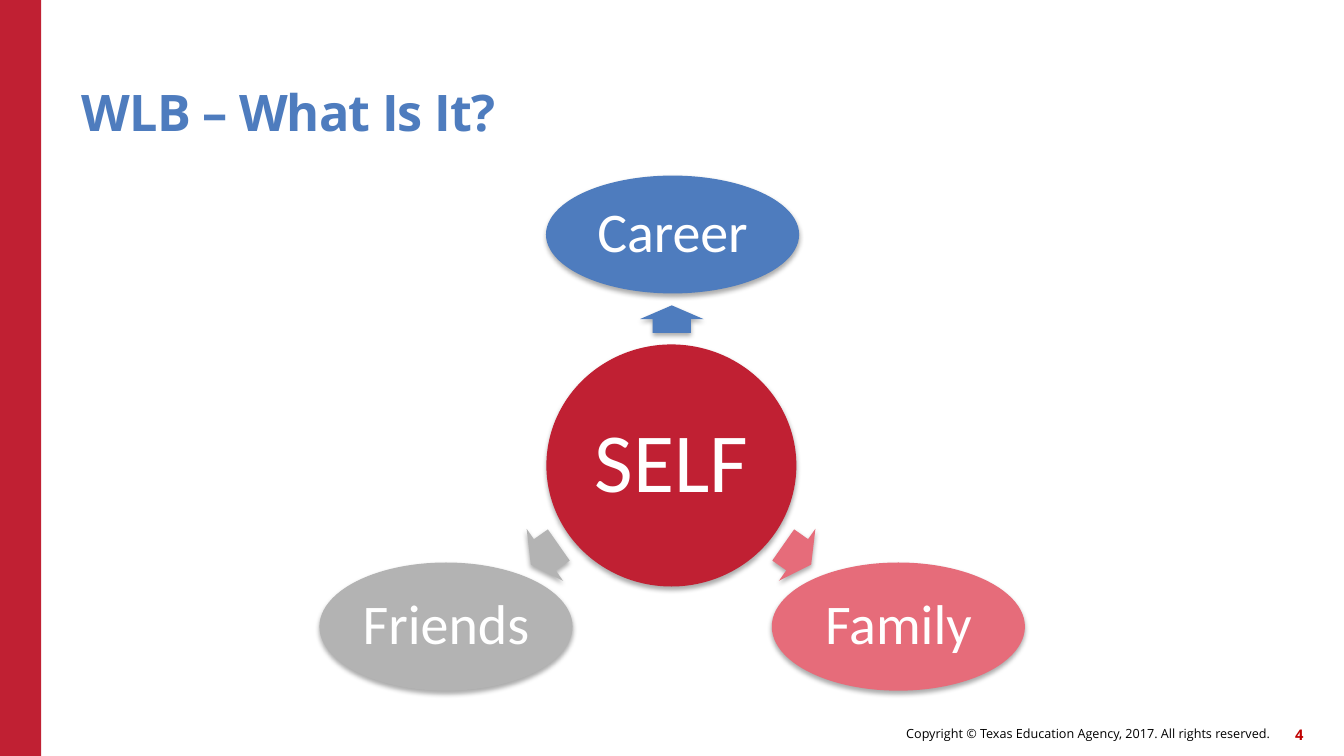
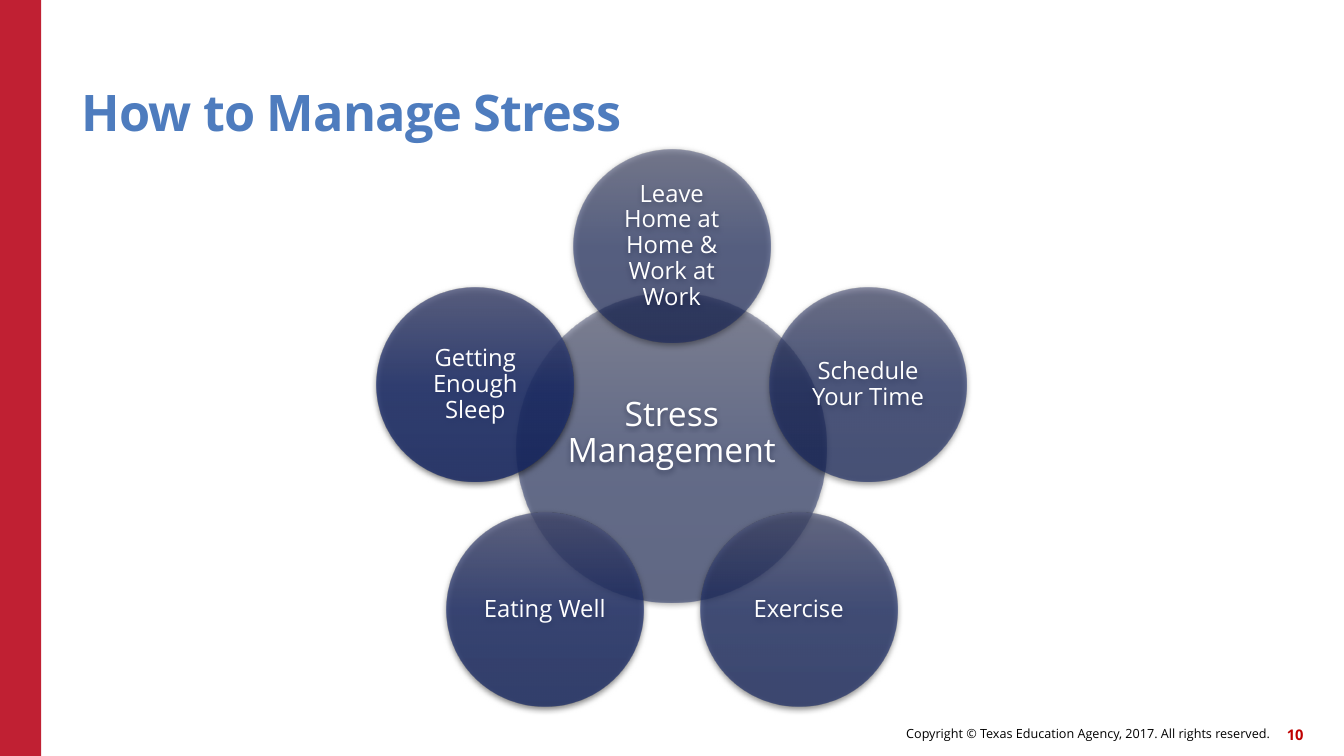
from lxml import etree
from pptx import Presentation
from pptx.dml.color import RGBColor
from pptx.enum.shapes import MSO_SHAPE
from pptx.enum.text import MSO_ANCHOR, PP_ALIGN
from pptx.oxml.ns import qn
from pptx.util import Cm, Pt

OVAL, ARROW, RECT = MSO_SHAPE.OVAL, MSO_SHAPE.RIGHT_ARROW, MSO_SHAPE.RECTANGLE
MIDDLE, BOTTOM = MSO_ANCHOR.MIDDLE, MSO_ANCHOR.BOTTOM
LEFT, CENTER, RIGHT = PP_ALIGN.LEFT, PP_ALIGN.CENTER, PP_ALIGN.RIGHT

RED = RGBColor(0xC0, 0x20, 0x33)
BLUE = RGBColor(0x4E, 0x7C, 0xBE)
PINK = RGBColor(0xE6, 0x6C, 0x7A)
GREY = RGBColor(0xB3, 0xB3, 0xB3)
WHITE = RGBColor(0xFF, 0xFF, 0xFF)
BLACK = RGBColor(0, 0, 0)
CRIMSON = RGBColor(0xC0, 0, 0)
# Top, middle and bottom of the bubble gradient, palest and deepest
PALE = [RGBColor(0x4E, 0x53, 0x74), RGBColor(0x1A, 0x2A, 0x63),
        RGBColor(0x14, 0x23, 0x5B)]
DEEP = [RGBColor(0x4F, 0x56, 0x7D), RGBColor(0x1E, 0x2F, 0x6D),
        RGBColor(0x17, 0x28, 0x64)]

SANS, BODY = "Open Sans", "Calibri"
WIDTH, HEIGHT = 33.87, 19.05
CREDIT = "Copyright © Texas Education Agency, 2017. All rights reserved."


def add(parent, tag, **attrs):
    """Append a child element to parent, with its attributes as text."""
    child = etree.SubElement(parent, qn(tag))
    for key, value in attrs.items():
        child.set(key, str(value))
    return child


def mix(pale, deep, part):
    return RGBColor(*(round(a + (b - a) * part) for a, b in zip(pale, deep)))


class Deck:
    def __init__(self):
        self.prs = Presentation()
        self.prs.slide_width, self.prs.slide_height = Cm(WIDTH), Cm(HEIGHT)
        self.slide = None

    def page(self, title, number):
        """Start a slide with its side band, title and footer."""
        self.slide = self.prs.slides.add_slide(self.prs.slide_layouts[6])
        self.shape(RECT, (0.52, HEIGHT / 2), (1.04, HEIGHT), RED)
        self.label(CREDIT, (15.6, 18.08, 16.4, 0.81), 9, BLACK, RIGHT)
        self.label(str(number), (31.78, 18.11, 1.07, 0.81), 10.5, CRIMSON,
                   RIGHT, bold=True)
        head = self.label(title, (2.06, 1.14, 27.94, 2.44), 36, BLUE, LEFT,
                          bold=True, anchor=BOTTOM)
        head.line_spacing = 0.9
        head.runs[0]._r.get_or_add_rPr().set("spc", "-60")

    def letter(self, frame, text, size, color, align, font=SANS, bold=False,
               anchor=MIDDLE, inset=0):
        """Fill a text frame with one styled paragraph."""
        frame.word_wrap = True
        frame.vertical_anchor = anchor
        frame.margin_left = frame.margin_right = Cm(inset)
        frame.margin_top = frame.margin_bottom = Cm(inset)
        par = frame.paragraphs[0]
        par.text = text
        par.alignment = align
        par.font.name, par.font.size = font, Pt(size)
        par.font.bold, par.font.color.rgb = bold, color
        return par

    def label(self, text, area, size, color, align, **style):
        box = self.slide.shapes.add_textbox(*map(Cm, area))
        return self.letter(box.text_frame, text, size, color, align, **style)

    def shape(self, kind, mid, size, color=None):
        """Add a plain shape centred on mid."""
        (x, y), (w, h) = mid, size
        item = self.slide.shapes.add_shape(
            kind, Cm(x - w / 2), Cm(y - h / 2), Cm(w), Cm(h))
        item.shadow.inherit = False
        item.line.fill.background()
        if color is not None:
            item.fill.solid()
            item.fill.fore_color.rgb = color
        return item

    def shade(self, item, alpha, blur, drop):
        """Cast a soft shadow straight down."""
        effect = item.element.spPr.find(qn("a:effectLst"))
        cast = add(effect, "a:outerShdw", blurRad=Pt(blur), dist=Pt(drop),
                   dir=5400000, algn="ctr", rotWithShape=0)
        tint = add(cast, "a:srgbClr", val=BLACK)
        add(tint, "a:alpha", val=alpha * 1000)

    def oval(self, text, mid, size, color, points):
        item = self.shape(OVAL, mid, size, color)
        self.shade(item, 32, 3.5, 2.2)
        par = self.letter(item.text_frame, text, points, WHITE, CENTER, BODY)
        par.line_spacing = 0.9

    def arrow(self, mid, size, turn, color):
        item = self.shape(ARROW, mid, size, color)
        item.adjustments[0], item.adjustments[1] = 0.6, 0.5
        item.rotation = turn
        self.shade(item, 32, 3.5, 2.2)

    def bubble(self, text, mid, size, points, step, inset=0.0):
        """Add a see-through circle; step 0 is the palest, 5 the deepest."""
        item = self.shape(OVAL, mid, size)
        item.fill.gradient()
        item.fill.gradient_angle = 270
        stops = item.element.spPr.find(".//" + qn("a:gsLst"))
        for old in list(stops):
            stops.remove(old)
        for i, (pale, deep) in enumerate(zip(PALE, DEEP)):
            stop = add(stops, "a:gs", pos=i * 50000)
            tint = add(stop, "a:srgbClr", val=mix(pale, deep, step / 5))
            add(tint, "a:alpha", val=(50 + 6 * step) * 1000)
        self.shade(item, 63, 4.5, 1.5)
        par = self.letter(item.text_frame, text, points, WHITE, CENTER,
                          inset=inset)
        par.line_spacing = 0.9
        return item


def balance(deck):
    deck.page("WLB – What Is It?", 4)
    deck.oval("SELF", (16.92, 11.73), (6.3, 6.1), RED, 60)
    parts = [
        ("Career", (16.95, 5.91), 2.97, BLUE, (16.93, 8.04), 0.69, 270),
        ("Family", (22.64, 15.79), 3.23, PINK, (20.09, 13.98), 0.86, 35),
        ("Friends", (11.24, 15.79), 3.23, GREY, (13.73, 13.98), 0.86, 145),
    ]
    for text, mid, tall, color, spot, long, turn in parts:
        deck.arrow(spot, (long, 1.6), turn, color)
        deck.oval(text, mid, (6.38, tall), color, 40)


def stress(deck):
    deck.page("How to Manage Stress", 10)
    x, y = 16.93, 11.28
    core = deck.bubble("Stress Management", (x, y), (7.8, 7.8), 24, 0)
    core.text_frame.margin_bottom = Cm(0.7)
    ring = [
        ("Leave Home at Home & Work at Work", 0, -5.08),
        ("Schedule Your Time", 4.95, -1.58),
        ("Exercise", 3.2, 4.09),
        ("Eating Well", -3.2, 4.09),
        ("Getting Enough Sleep", -4.95, -1.58),
    ]
    for step, (text, dx, dy) in enumerate(ring, 1):
        deck.bubble(text, (x + dx, y + dy), (4.96, 4.88), 17, step, 0.1)


def main():
    deck = Deck()
    balance(deck)
    stress(deck)
    deck.prs.save("out.pptx")


if __name__ == "__main__":
    main()
